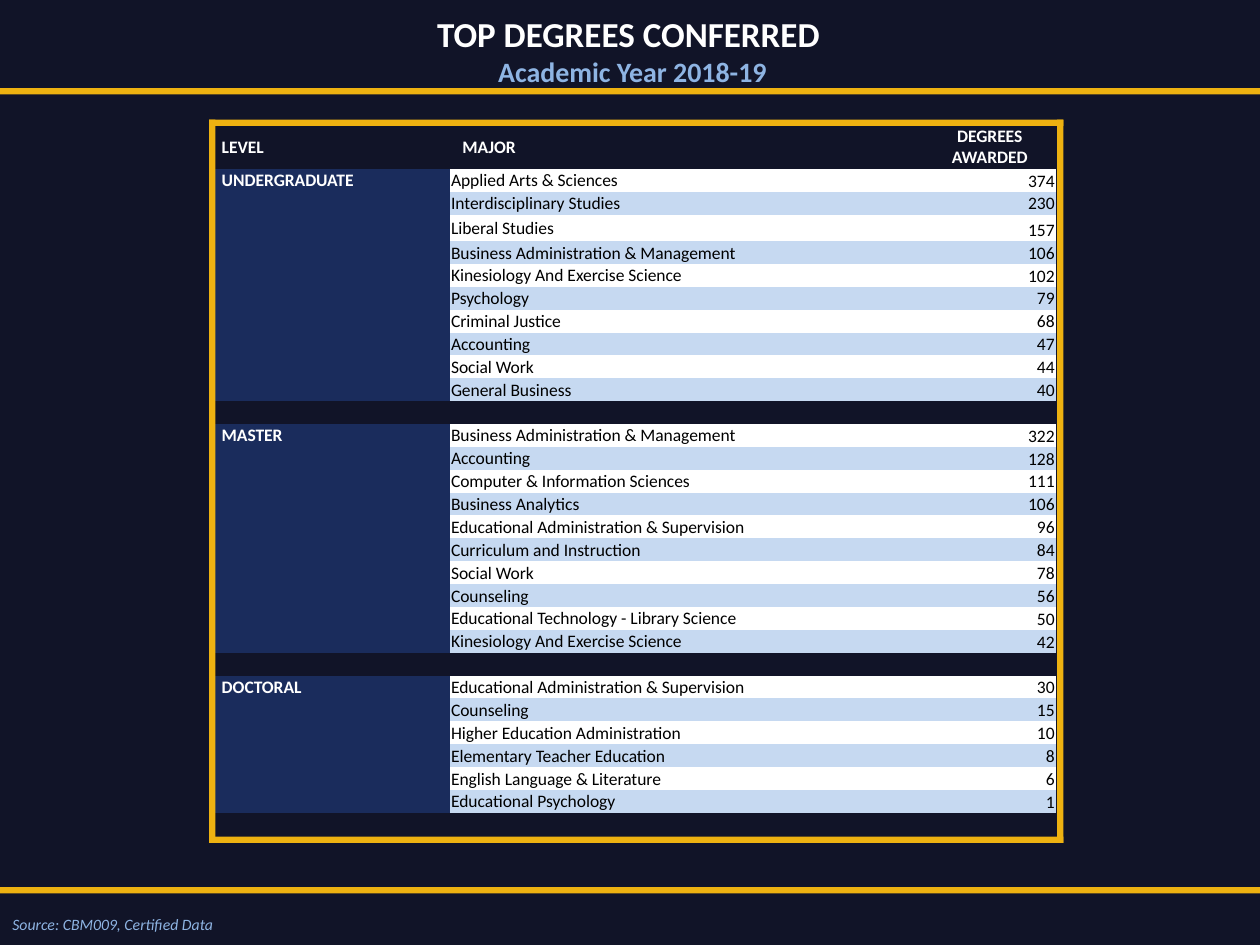
from lxml.etree import SubElement
from pptx import Presentation
from pptx.dml.color import RGBColor
from pptx.enum.shapes import MSO_SHAPE
from pptx.enum.text import MSO_ANCHOR, MSO_AUTO_SIZE, PP_ALIGN
from pptx.oxml.ns import qn
from pptx.util import Inches, Pt

NAVY = RGBColor(0x11, 0x14, 0x28)
BLUE = RGBColor(0x1A, 0x2C, 0x5C)
PALE = RGBColor(0xC6, 0xD9, 0xF1)
SKY = RGBColor(0x8E, 0xB4, 0xE3)
GOLD = RGBColor(0xEE, 0xB2, 0x11)
WHITE = RGBColor(0xFF, 0xFF, 0xFF)
BLACK = RGBColor(0x00, 0x00, 0x00)
NO_STYLE_NO_GRID = "{2D5ABB26-0587-4C30-8999-92F81FD0307C}"

HEADER = ("LEVEL", "MAJOR", "DEGREES AWARDED")
DEGREES = {
    "UNDERGRADUATE": [
        ("Applied Arts & Sciences", 374),
        ("Interdisciplinary Studies", 230),
        ("Liberal Studies", 157),
        ("Business Administration & Management", 106),
        ("Kinesiology And Exercise Science", 102),
        ("Psychology", 79),
        ("Criminal Justice", 68),
        ("Accounting", 47),
        ("Social Work", 44),
        ("General Business", 40),
    ],
    "MASTER": [
        ("Business Administration & Management", 322),
        ("Accounting", 128),
        ("Computer & Information Sciences", 111),
        ("Business Analytics", 106),
        ("Educational Administration & Supervision", 96),
        ("Curriculum and Instruction", 84),
        ("Social Work", 78),
        ("Counseling", 56),
        ("Educational Technology - Library Science", 50),
        ("Kinesiology And Exercise Science", 42),
    ],
    "DOCTORAL": [
        ("Educational Administration & Supervision", 30),
        ("Counseling", 15),
        ("Higher Education Administration", 10),
        ("Elementary Teacher Education", 8),
        ("English Language & Literature", 6),
        ("Educational Psychology", 1),
    ],
}


def write(p, text, size=10, color=WHITE, bold=False, italic=False, align=PP_ALIGN.LEFT):
    """Add one formatted run to a paragraph."""
    p.alignment = align
    r = p.add_run()
    r.text = text
    r.font.name = "Calibri"
    r.font.size = Pt(size)
    r.font.bold = bold
    r.font.italic = italic
    r.font.color.rgb = color


class DegreesSlide:
    """Slide with the house style and a method for each kind of element."""

    def __init__(self, prs):
        self.s = prs.slides.add_slide(prs.slide_layouts[5])
        self.s.background.fill.solid()
        self.s.background.fill.fore_color.rgb = NAVY

    def title(self, text, subtitle, left, top, width, height):
        """Fill the title placeholder with a heading and a subheading."""
        sp = self.s.shapes.title
        sp.left, sp.top = Inches(left), Inches(top)
        sp.width, sp.height = Inches(width), Inches(height)
        tf = sp.text_frame
        tf.auto_size = MSO_AUTO_SIZE.NONE
        tf.vertical_anchor = MSO_ANCHOR.TOP
        write(tf.paragraphs[0], text, size=20, bold=True, align=PP_ALIGN.CENTER)
        write(tf.add_paragraph(), subtitle, size=16, color=SKY, bold=True,
              align=PP_ALIGN.CENTER)

    def bar(self, left, top, width, height):
        """Draw a gold bar."""
        sp = self.s.shapes.add_shape(MSO_SHAPE.RECTANGLE, Inches(left), Inches(top),
                                     Inches(width), Inches(height))
        sp.shadow.inherit = False
        sp.fill.solid()
        sp.fill.fore_color.rgb = GOLD
        sp.line.fill.background()

    def note(self, text, left, top, width, height):
        """Add a small italic source note."""
        sp = self.s.shapes.add_textbox(Inches(left), Inches(top), Inches(width), Inches(height))
        tf = sp.text_frame
        tf.word_wrap = True
        write(tf.paragraphs[0], text, size=9, color=SKY, italic=True)

    def cell(self, cell, text, fill, indent=0.01, anchor=MSO_ANCHOR.MIDDLE, **fmt):
        """Fill one table cell and write its text, or keep it empty at a small size."""
        cell.fill.solid()
        cell.fill.fore_color.rgb = fill
        cell.margin_left = Inches(indent)
        cell.margin_top = cell.margin_right = Inches(0.01)
        cell.margin_bottom = 0
        cell.vertical_anchor = anchor
        p = cell.text_frame.paragraphs[0]
        if text:
            write(p, text, **fmt)
        else:
            SubElement(p._p, qn("a:endParaRPr"), sz="800")

    def table(self, left, top, widths, height):
        """Build the degrees table, one block per level closed by a dark row."""
        count = 1 + sum(len(majors) + 1 for majors in DEGREES.values())
        frame = self.s.shapes.add_table(count, len(widths), Inches(left), Inches(top),
                                        Inches(sum(widths)), Inches(height))
        frame.element.find(".//" + qn("a:tableStyleId")).text = NO_STYLE_NO_GRID
        table = frame.table
        table.first_row = table.horz_banding = False
        for column, width in zip(table.columns, widths):
            column.width = Inches(width)
        tall = {0: 0.35, 3: 0.21}
        normal = (height - sum(tall.values())) / (count - len(tall))
        for i, row in enumerate(table.rows):
            row.height = Inches(tall.get(i, normal))

        for c, text in enumerate(HEADER):
            last = c == len(HEADER) - 1
            self.cell(table.cell(0, c), text, NAVY, indent=0.01 if last else 0.1, bold=True,
                      align=PP_ALIGN.CENTER if last else PP_ALIGN.LEFT)
        row = 1
        for level, majors in DEGREES.items():
            for i, (major, awarded) in enumerate(majors):
                fill = PALE if i % 2 else WHITE
                self.cell(table.cell(row, 0), "" if i else level, BLUE, indent=0.1, bold=True)
                self.cell(table.cell(row, 1), major, fill, color=BLACK)
                self.cell(table.cell(row, 2), str(awarded), fill, anchor=MSO_ANCHOR.BOTTOM,
                          color=BLACK, align=PP_ALIGN.RIGHT)
                row += 1
            for c in range(len(widths)):
                self.cell(table.cell(row, c), "", NAVY)
            row += 1


def main():
    """Build and save the slide."""
    prs = Presentation()
    prs.slide_width, prs.slide_height = Inches(10), Inches(7.5)
    slide = DegreesSlide(prs)
    slide.title("TOP DEGREES CONFERRED ", "Academic Year 2018-19", 1.74, 0.05, 6.56, 1.28)
    slide.table(1.66, 0.99, (1.91, 3.76, 1.05), 5.65)
    slide.note("Source: CBM009, Certified Data", 0, 7.21, 1.86, 0.25)
    for top in (0.7, 7.04):
        slide.bar(0, top, 10, 0.05)
    for top in (0.95, 6.64):
        slide.bar(1.66, top, 6.78, 0.05)
    for left in (1.66, 8.39):
        slide.bar(left, 0.95, 0.05, 5.74)
    prs.save("out.pptx")


if __name__ == "__main__":
    main()
